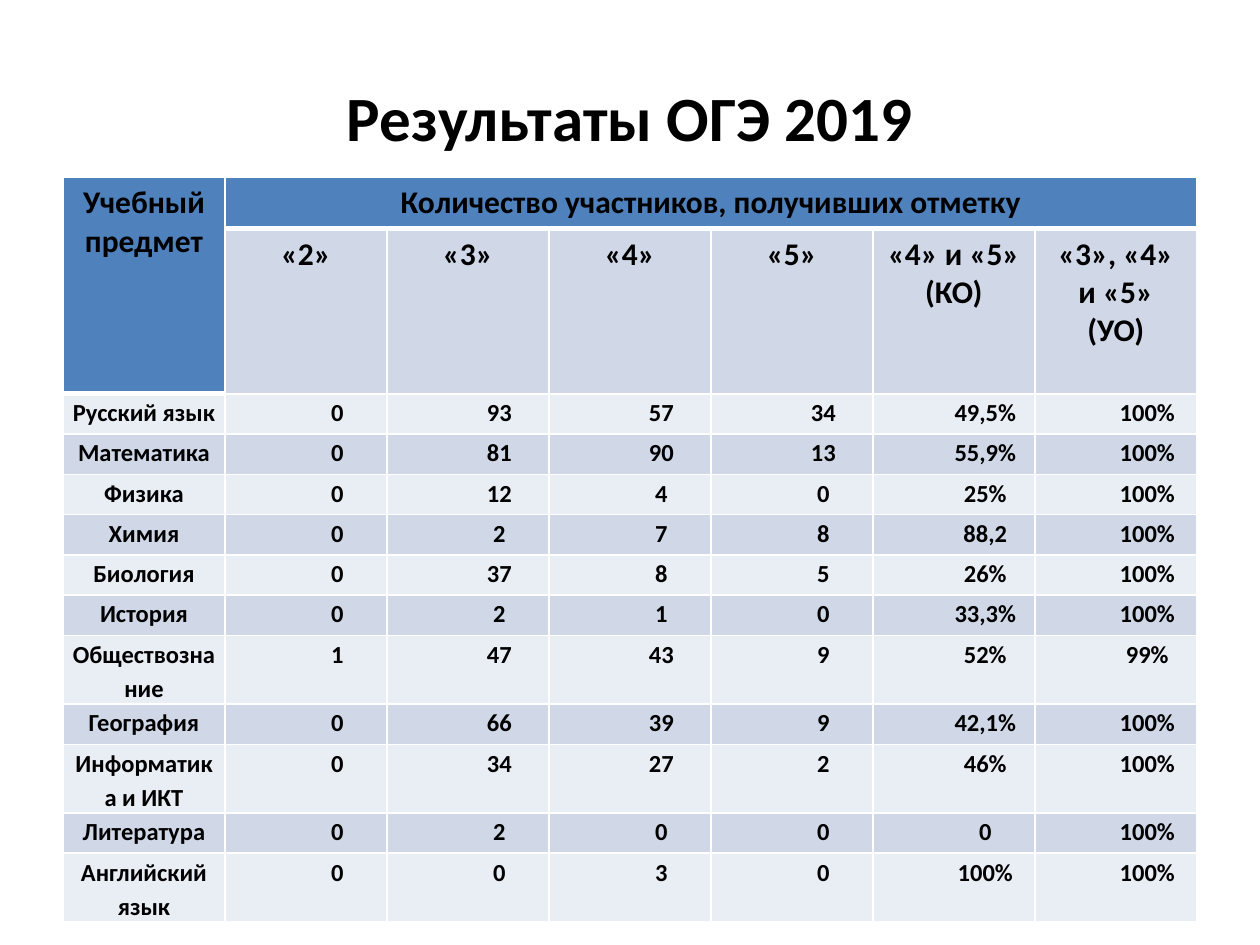
from lxml import etree
from pptx import Presentation, util as u
from pptx.dml.color import RGBColor
from pptx.enum import text
from pptx.oxml.ns import qn

W, H = 10, 7.5
FONT = "Calibri"
COLORS = {"text": "000000", "head": "4F81BD", "dark": "D0D8E8",
          "light": "E9EDF4", "grid": "FFFFFF"}

HEADINGS = ["«2»", "«3»", "«4»", "«5»", "«4» и «5»\n(КО)", "«3», «4» и «5»\n(УО)"]
RESULTS = [
    ("Русский язык", "0", "93", "57", "34", "49,5%", "100%"),
    ("Математика", "0", "81", "90", "13", "55,9%", "100%"),
    ("Физика", "0", "12", "4", "0", "25%", "100%"),
    ("Химия", "0", "2", "7", "8", "88,2", "100%"),
    ("Биология", "0", "37", "8", "5", "26%", "100%"),
    ("История", "0", "2", "1", "0", "33,3%", "100%"),
    ("Обществознание", "1", "47", "43", "9", "52%", "99%"),
    ("География", "0", "66", "39", "9", "42,1%", "100%"),
    ("Информатика и ИКТ", "0", "34", "27", "2", "46%", "100%"),
    ("Литература", "0", "2", "0", "0", "0", "100%"),
    ("Английский язык", "0", "0", "3", "0", "100%", "100%"),
]
TWO_LINES = {"Обществознание", "Информатика и ИКТ", "Английский язык"}
HEAD_ROWS = [0.4, 1.31]
ROW, TALL_ROW = 0.32, 0.54


def write(tf, words, size=18, spacing=None, indent=0):
    tf.text = words
    for p in tf.paragraphs:
        p.alignment = text.PP_ALIGN.CENTER
        if spacing:
            p.line_spacing = spacing
        if indent:
            p._p.get_or_add_pPr().set("marL", str(u.Inches(indent)))
        for r in p.runs:
            r.font.name, r.font.size, r.font.bold = FONT, u.Pt(size), True
            r.font.color.rgb = RGBColor.from_string(COLORS["text"])


def style_cell(cell, fill, bottom=1):
    # White grid lines come before the fill in the cell properties
    tcPr = cell._tc.get_or_add_tcPr()
    for side, width in zip("LRTB", (1, 1, 1, bottom)):
        ln = etree.SubElement(tcPr, qn(f"a:ln{side}"), w=str(u.Pt(width)))
        solid = etree.SubElement(ln, qn("a:solidFill"))
        etree.SubElement(solid, qn("a:srgbClr"), val=COLORS["grid"])
    cell.fill.solid()
    cell.fill.fore_color.rgb = RGBColor.from_string(COLORS[fill])


def add_title(s, x, y, w, h):
    sp = s.shapes.title
    sp.left, sp.top, sp.width, sp.height = map(u.Inches, (x, y, w, h))
    sp.text_frame.vertical_anchor = text.MSO_ANCHOR.MIDDLE
    write(sp.text_frame, "Результаты ОГЭ 2019", size=36)


def add_results(s, x, y, w):
    heights = HEAD_ROWS + [TALL_ROW if row[0] in TWO_LINES else ROW for row in RESULTS]
    n_cols = len(HEADINGS) + 1
    tbl = s.shapes.add_table(len(heights), n_cols,
                             *map(u.Inches, (x, y, w, sum(heights)))).table
    for col in tbl.columns:
        col.width = u.Inches(w / n_cols)
    for row, height in zip(tbl.rows, heights):
        row.height = u.Inches(height)

    # Fills and grid lines: blue header, then alternating bands
    for i in range(len(heights)):
        for j in range(n_cols):
            head = i == 0 or (i == 1 and j == 0)
            fill = "head" if head else "dark" if i % 2 else "light"
            style_cell(tbl.cell(i, j), fill, bottom=3 if head else 1)

    # Header
    tbl.cell(0, 0).merge(tbl.cell(1, 0))
    tbl.cell(0, 1).merge(tbl.cell(0, n_cols - 1))
    write(tbl.cell(0, 0).text_frame, "Учебный предмет")
    write(tbl.cell(0, 1).text_frame, "Количество участников, получивших отметку")
    for j, words in enumerate(HEADINGS, 1):
        write(tbl.cell(1, j).text_frame, words)

    # Subjects and their marks
    for i, row in enumerate(RESULTS, len(HEAD_ROWS)):
        for j, words in enumerate(row):
            cell = tbl.cell(i, j)
            cell.margin_left = cell.margin_right = u.Inches(0.07)
            cell.margin_top = cell.margin_bottom = 0
            write(cell.text_frame, words, size=14, spacing=1.15, indent=0.5 if j else 0)


def main():
    prs = Presentation()
    prs.slide_width, prs.slide_height = u.Inches(W), u.Inches(H)
    s = prs.slides.add_slide(prs.slide_layouts[5])
    add_title(s, 0.05 * W, 0.04 * H, 0.9 * W, H / 6)
    add_results(s, 0.05 * W, 0.188 * H, 0.9 * W)
    prs.save("out.pptx")


if __name__ == "__main__":
    main()
